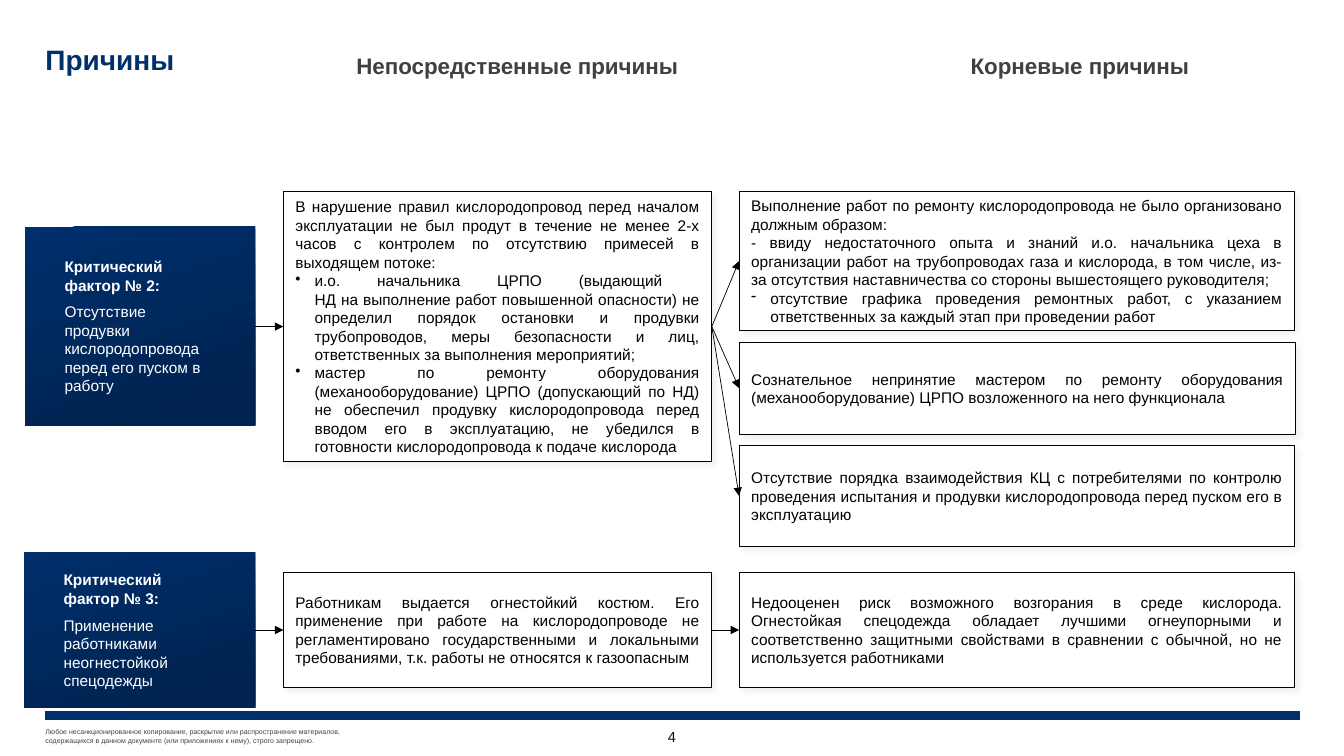
import copy
import pptx
import pptx.util
import pptx.dml.color
import pptx.enum.shapes
import pptx.enum.text
import pptx.oxml
import pptx.oxml.ns
from pptx.util import Inches

ALIGN = pptx.enum.text.PP_ALIGN
ANCHOR = pptx.enum.text.MSO_ANCHOR
RECT = pptx.enum.shapes.MSO_SHAPE.RECTANGLE
STRAIGHT = pptx.enum.shapes.MSO_CONNECTOR.STRAIGHT
color = pptx.dml.color.RGBColor.from_string
qn = pptx.oxml.ns.qn
NS = pptx.oxml.ns.nsdecls("a")
NAVY, NIGHT, GRAY, BLACK, WHITE = "002F6C", "002351", "404040", "000000", "FFFFFF"
SHADE = (f'<a:effectLst {NS}><a:outerShdw blurRad="50800" dist="38100" dir="2700000" '
         'algn="tl" rotWithShape="0"><a:srgbClr val="000000"><a:alpha val="5000"/>'
         '</a:srgbClr></a:outerShdw></a:effectLst>')


def write(shape, paras, size=11, ink=BLACK, align=ALIGN.LEFT, anchor=ANCHOR.MIDDLE,
          side=0, top=0, bold=0, after=0, lead=None):
    """Fill a shape; the first `bold` paragraphs are bold, a (mark, text) pair is a bullet."""
    frame = shape.text_frame
    frame.word_wrap = True
    frame.auto_size = pptx.enum.text.MSO_AUTO_SIZE.NONE
    frame.vertical_anchor = anchor
    frame.margin_left = frame.margin_right = Inches(side)
    frame.margin_top, frame.margin_bottom = Inches(top), 0
    for i, text in enumerate(paras):
        para = frame.add_paragraph() if i else frame.paragraphs[0]
        if isinstance(text, tuple):
            mark, text = text
            props = para._p.get_or_add_pPr()
            props.set("marL", str(Inches(0.19)))
            props.set("indent", str(-Inches(0.19)))
            props.append(pptx.oxml.parse_xml(f'<a:buChar {NS} char="{mark}"/>'))
        para.text = text
        para.alignment = align
        para.space_after = pptx.util.Pt(after)
        if lead:
            para.line_spacing = lead
        for run in para.runs:
            run.font.name = "Arial"
            run.font.size = pptx.util.Pt(size)
            run.font.bold = i < bold
            run.font.color.rgb = color(ink)
        for br in para._p.findall(qn("a:br")):
            br.insert(0, copy.deepcopy(para.runs[0]._r.rPr))


def draw(start, end, ink=BLACK, width=0.5, arrow=True):
    line = slide.shapes.add_connector(STRAIGHT, *map(Inches, start + end))
    line.line.color.rgb = color(ink)
    line.line.width = pptx.util.Pt(width)
    if arrow:
        line.line._get_or_add_ln().append(
            pptx.oxml.parse_xml(f'<a:tailEnd {NS} type="triangle"/>'))
    line._element.spPr.append(pptx.oxml.parse_xml(f"<a:effectLst {NS}/>"))


deck = pptx.Presentation()
deck.slide_width, deck.slide_height = Inches(13.33), Inches(7.5)
slide = deck.slides.add_slide(deck.slide_layouts[5])

title = slide.shapes.title
title.left, title.top, title.width, title.height = map(Inches, (0.45, 0.29, 11.35, 0.61))
write(title, ["Причины"], size=20, ink=NAVY, top=0.04, bold=1, lead=0.85)

# Footer and column heads
draw((0.45, 7.1), (12.89, 7.1), ink=NAVY, width=6, arrow=False)
labels = [
    ((0.45, 7.22, 5.12, 0.17),
     "Любое несанкционированное копирование, раскрытие или распространение материалов, \n"
     "содержащихся в данном документе (или приложениях к нему), строго запрещено.",
     dict(size=5, ink=GRAY)),
    ((6.31, 7.18, 0.71, 0.25), "4", dict(size=10.5, ink="0D0D0D", align=ALIGN.CENTER)),
]
head = dict(size=16, ink=GRAY, align=ALIGN.CENTER, anchor=ANCHOR.TOP, bold=1, after=6)
labels += [((3.44, 0.52, 3.38, 0.27), "Непосредственные причины", head),
           ((9.42, 0.52, 2.58, 0.27), "Корневые причины", head)]
for place, text, style in labels:
    write(slide.shapes.add_textbox(*map(Inches, place)), [text], **style)

# Critical factors
factors = [
    ((0.25, 2.25, 2.28, 1.97), "Критический фактор № 2:",
     "Отсутствие продувки кислородопровода перед его пуском в работу"),
    ((0.24, 5.48, 2.29, 1.54), "Критический фактор № 3:",
     "Применение работниками неогнестойкой спецодежды"),
]
for place, name, text in factors:
    card = slide.shapes.add_shape(RECT, *map(Inches, place))
    card.shadow.inherit = False
    card.fill.gradient()
    card.fill.gradient_angle = 290
    for stop, ink, pos in zip(card.fill.gradient_stops, (NAVY, NIGHT), (0, 0.86)):
        stop.color.rgb = color(ink)
        stop.position = pos
    card.line.fill.background()
    write(card, [name, text], ink=WHITE, side=0.39, bold=1, after=6)

# Direct causes, then root causes
causes = [
    ((2.81, 1.9, 4.25, 2.68), [
        "В нарушение правил кислородопровод перед началом эксплуатации не был продут в "
        "течение не менее 2-х часов с контролем по отсутствию примесей в выходящем потоке:",
        ("•", "и.о. начальника ЦРПО (выдающий \nНД на выполнение работ повышенной опасности) "
         "не определил порядок остановки и продувки трубопроводов, меры безопасности и лиц, "
         "ответственных за выполнения мероприятий;"),
        ("•", "мастер по ремонту оборудования (механооборудование) ЦРПО (допускающий по НД) "
         "не обеспечил продувку кислородопровода перед вводом его в эксплуатацию, "
         "не убедился в готовности кислородопровода к подаче кислорода")]),
    ((2.81, 5.68, 4.25, 1.14), [
        "Работникам выдается огнестойкий костюм. Его применение при работе на "
        "кислородопроводе не регламентировано государственными и локальными требованиями, "
        "т.к. работы не относятся к газоопасным"]),
    ((7.33, 1.9, 5.51, 1.38), [
        "Выполнение работ по ремонту кислородопровода не было организовано должным образом:",
        "- ввиду недостаточного опыта и знаний и.о. начальника цеха в организации работ на "
        "трубопроводах газа и кислорода, в том числе, из-за отсутствия наставничества со "
        "стороны вышестоящего руководителя;",
        ("-", "отсутствие графика проведения ремонтных работ, с указанием ответственных за "
         "каждый этап при проведении работ")]),
    ((7.33, 3.4, 5.52, 0.91), [
        "Сознательное непринятие мастером по ремонту оборудования (механооборудование) "
        "ЦРПО возложенного на него функционала"]),
    ((7.33, 4.42, 5.51, 1), [
        "Отсутствие порядка взаимодействия КЦ с потребителями по контролю проведения "
        "испытания и продувки кислородопровода перед пуском его в эксплуатацию"]),
    ((7.33, 5.68, 5.51, 1.14), [
        "Недооценен риск возможного возгорания в среде кислорода. Огнестойкая спецодежда "
        "обладает лучшими огнеупорными и соответственно защитными свойствами в сравнении "
        "с обычной, но не используется работниками"]),
]
for place, paras in causes:
    box = slide.shapes.add_shape(RECT, *map(Inches, place))
    box.fill.solid()
    box.fill.fore_color.rgb = color(WHITE)
    box.line.color.rgb = color(BLACK)
    box.line.width = pptx.util.Pt(0.5)
    box._element.spPr.append(pptx.oxml.parse_xml(SHADE))
    write(box, paras, align=ALIGN.JUSTIFY, side=0.12)

# Arrows from factor to cause to root
for y, ends in ((3.24, (2.59, 3.85, 4.92)), (6.25, (6.25,))):
    draw((2.53, y), (2.81, y))
    for end in ends:
        draw((7.06, y), (7.33, end))

deck.save("out.pptx")
